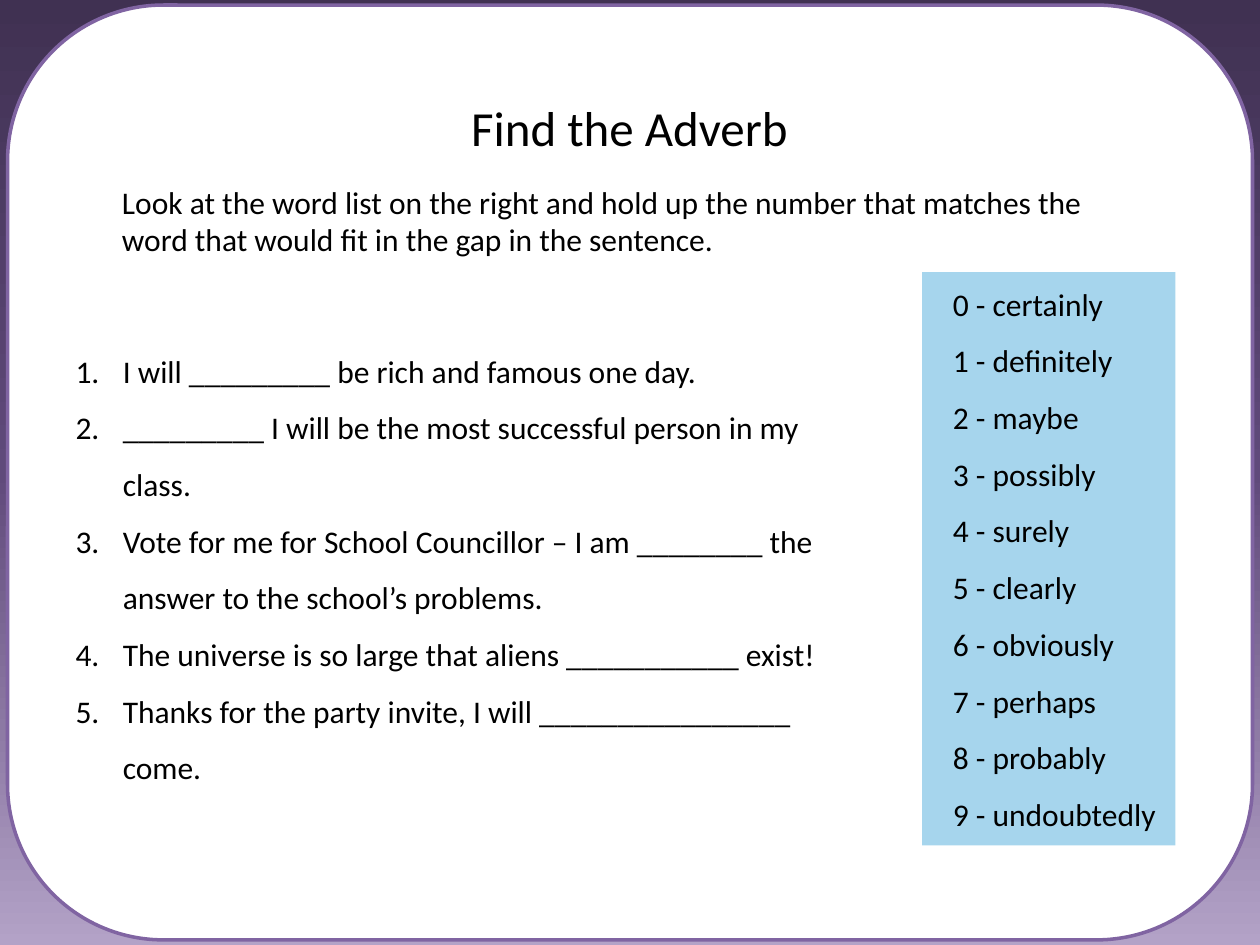
from copy import deepcopy
from dataclasses import dataclass
from typing import Optional

from lxml.etree import SubElement
from pptx import Presentation
from pptx.dml.color import RGBColor
from pptx.enum.shapes import MSO_SHAPE
from pptx.enum.text import MSO_ANCHOR, PP_ALIGN
from pptx.oxml.ns import qn
from pptx.slide import Slide
from pptx.util import Pt

BLACK = RGBColor(0x00, 0x00, 0x00)
WHITE = RGBColor(0xFF, 0xFF, 0xFF)
PURPLE = RGBColor(0x80, 0x64, 0xA2)
BLUE = RGBColor(0x81, 0xC4, 0xE6)
DARK = RGBColor(0x40, 0x31, 0x52)
MID = RGBColor(0x60, 0x4A, 0x7B)
LIGHT = RGBColor(0xB3, 0xA2, 0xC7)

FONT = "Calibri"
HANG = 27  # hanging indent of numbered lines

RECT = MSO_SHAPE.RECTANGLE
ROUND = MSO_SHAPE.ROUNDED_RECTANGLE


@dataclass
class Panel:
    left: float
    top: float
    width: float
    height: float
    kind: MSO_SHAPE = ROUND
    fill: Optional[RGBColor] = None
    alpha: int = 100
    line: Optional[RGBColor] = None
    lines: tuple[str, ...] = ()
    size: int = 18
    align: PP_ALIGN = PP_ALIGN.LEFT
    space: float = 1.0
    number: bool = False


INTRO = (
    "Look at the word list on the right and hold up the number that "
    "matches the word that would fit in the gap in the sentence."
)
TASKS = (
    "I will _________ be rich and famous one day.",
    "_________ I will be the most successful person in my class.",
    "Vote for me for School Councillor – I am ________ the answer to "
    "the school’s problems.",
    "The universe is so large that aliens ___________ exist!",
    "Thanks for the party invite, I will ________________ come.",
)
WORDS = (
    "certainly", "definitely", "maybe", "possibly", "surely",
    "clearly", "obviously", "perhaps", "probably", "undoubtedly",
)

PANELS = (
    # White card and blue list box
    Panel(4.3, 2.9, 711.4, 534.2, fill=WHITE, line=PURPLE),
    Panel(527, 155.5, 144.7, 327.6, RECT, fill=BLUE, alpha=70),
    # Instruction and title
    Panel(59.8, 97.2, 584.6, 57.6, lines=(INTRO,)),
    Panel(36, 49.7, 647.3, 46.1, RECT, lines=("Find the Adverb",),
          size=28, align=PP_ALIGN.CENTER),
    # Sentences and word list
    Panel(20.2, 157, 496, 325.4, lines=TASKS, space=1.5, number=True),
    Panel(529.9, 145.4, 153.4, 337, space=1.5,
          lines=tuple(f"{i} - {word}" for i, word in enumerate(WORDS))),
)


def paint_back(slide: Slide) -> None:
    """Fill the background from dark at the top to light below."""
    fill = slide.background.fill
    fill.gradient()
    fill.gradient_angle = 270
    stops = slide.element.find(".//" + qn("a:gsLst"))
    stops.append(deepcopy(stops[0]))
    shades = ((0, DARK), (0.5, MID), (1, LIGHT))
    for stop, (place, shade) in zip(fill.gradient_stops, shades):
        stop.position = place
        stop.color.rgb = shade


def add_panel(slide: Slide, panel: Panel) -> None:
    """Draw one shape with its fill, outline and text."""
    shape = slide.shapes.add_shape(
        panel.kind, Pt(panel.left), Pt(panel.top),
        Pt(panel.width), Pt(panel.height))
    shape.shadow.inherit = False

    # Fill and outline
    if panel.fill is None:
        shape.fill.background()
    else:
        shape.fill.solid()
        shape.fill.fore_color.rgb = panel.fill
    if panel.alpha < 100:
        tint = shape.element.spPr.find(".//" + qn("a:srgbClr"))
        SubElement(tint, qn("a:alpha"), val=str(panel.alpha * 1000))
    if panel.line is None:
        shape.line.fill.background()
    else:
        shape.line.color.rgb = panel.line
        shape.line.width = Pt(2)

    # Text
    frame = shape.text_frame
    frame.word_wrap = True
    frame.vertical_anchor = MSO_ANCHOR.MIDDLE
    for i, text in enumerate(panel.lines):
        para = frame.add_paragraph() if i else frame.paragraphs[0]
        para.alignment = panel.align
        para.line_spacing = panel.space
        if panel.number:
            props = para._p.get_or_add_pPr()
            props.set("marL", str(Pt(HANG)))
            props.set("indent", str(-Pt(HANG)))
            SubElement(props, qn("a:buFont"), typeface="+mj-lt")
            SubElement(props, qn("a:buAutoNum"), type="arabicPeriod")
        run = para.add_run()
        run.text = text
        run.font.name = FONT
        run.font.size = Pt(panel.size)
        run.font.color.rgb = BLACK


def main() -> None:
    deck = Presentation()
    deck.slide_width = Pt(720)
    deck.slide_height = Pt(540)
    slide = deck.slides.add_slide(deck.slide_layouts[6])
    paint_back(slide)
    for panel in PANELS:
        add_panel(slide, panel)
    deck.save("out.pptx")


if __name__ == "__main__":
    main()
